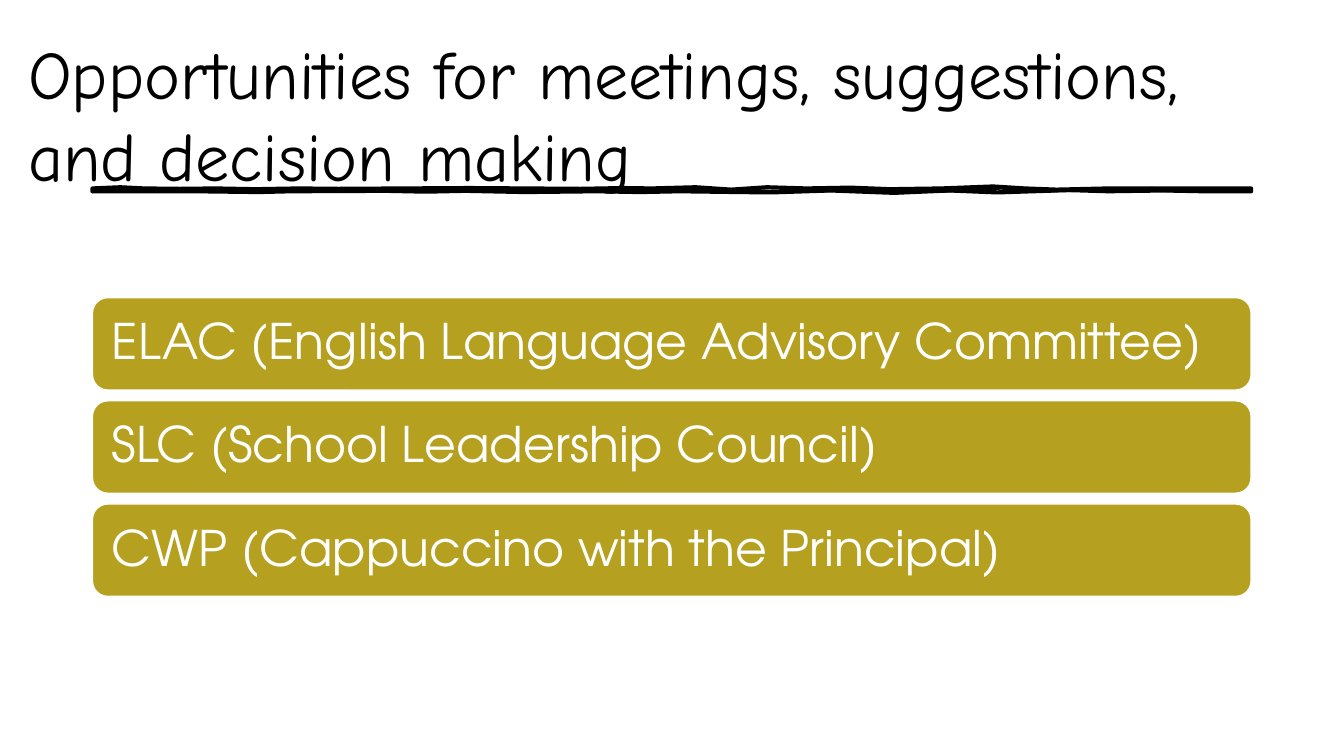
from dataclasses import dataclass

from pptx import Presentation
from pptx.dml.color import RGBColor
from pptx.enum.shapes import MSO_SHAPE
from pptx.enum.text import MSO_ANCHOR, PP_ALIGN
from pptx.util import Cm, Pt

ROUNDED = MSO_SHAPE.ROUNDED_RECTANGLE
MIDDLE = MSO_ANCHOR.MIDDLE
LEFT = PP_ALIGN.LEFT


@dataclass(frozen=True)
class Theme:
    ink: RGBColor = RGBColor(0x00, 0x00, 0x00)
    paper: RGBColor = RGBColor(0xFF, 0xFF, 0xFF)
    bar: RGBColor = RGBColor(0xB5, 0xA0, 0x20)
    title_font: str = "Comic Neue"
    body_font: str = "TeX Gyre Adventor"
    title_size: float = 48.6
    body_size: float = 35
    rule_width: float = 3
    bar_line: float = 1


THEME = Theme()
TITLE = "Opportunities for meetings, suggestions, and decision making"
GROUPS = [
    "ELAC (English Language Advisory Committee)",
    "SLC (School Leadership Council)",
    "CWP (Cappuccino with the Principal)",
]

# Hand-drawn edges: (distance along the rule, offset from the edge) in cm
OUTLINE_TOP = [(0, 0), (0.7, -0.03), (1.3, 0), (2.2, 0.01), (3.1, 0), (4.1, 0.02),
               (5.2, 0), (6.2, 0.01), (9.5, -0.01), (12.3, 0.01), (13.4, -0.01),
               (14.1, 0), (15.2, -0.03), (16.1, 0.03), (17, -0.03), (18, 0),
               (19.1, -0.02), (20.1, 0.02), (21.4, 0), (22.7, -0.05), (23.5, 0),
               (24.3, 0.03), (25.6, 0), (29.2, 0)]
OUTLINE_BOTTOM = [(0, 0), (2.6, 0), (4.2, 0.02), (5, 0), (7.4, -0.01), (8.4, 0.01),
                  (9.4, -0.01), (10.9, 0.02), (12.7, 0), (13.8, 0.02), (14.8, 0),
                  (16.3, 0.02), (17.1, 0.03), (18.6, -0.02), (20.2, 0.04),
                  (21.6, -0.02), (22.8, 0.03), (23.7, 0), (24.6, -0.03),
                  (25.6, 0), (27, -0.02), (28, 0), (29.2, 0)]
FILL_TOP = [(0, 0), (1, 0.03), (2, -0.03), (3.1, 0), (4.2, -0.02), (5.8, 0.02),
            (7.3, -0.02), (9, 0.02), (11.6, 0), (13, 0.02), (15.2, -0.02),
            (17.3, 0.04), (19.1, -0.04), (21.4, 0), (23, -0.02), (25, 0.04),
            (26.7, -0.04), (28, 0.03), (29.2, 0)]
FILL_BOTTOM = [(0, 0), (1.2, 0.02), (2.8, -0.01), (4, 0.02), (6.6, 0.01),
               (8, 0.02), (10, 0), (12, 0.02), (13.3, -0.03), (15, 0.02),
               (16.8, -0.02), (18.2, 0.04), (20, -0.04), (21.4, 0.04),
               (22.9, -0.04), (24, 0.03), (26, 0), (27.6, 0.03), (29.2, 0)]


def set_text(tf, text, font, size, color, inset):
    tf.word_wrap = True
    tf.vertical_anchor = MIDDLE
    tf.margin_left = tf.margin_right = Cm(inset)
    p = tf.paragraphs[0]
    p.text = text
    p.alignment = LEFT
    f = p.runs[0].font
    f.name, f.size, f.color.rgb = font, Pt(size), color
    return p


def add_title(s, x, y, w, h, text):
    tf = s.shapes.add_textbox(Cm(x), Cm(y), Cm(w), Cm(h)).text_frame
    set_text(tf, text, THEME.title_font, THEME.title_size, THEME.ink, 0.25)


def add_stroke(s, x, y, h, top, bottom):
    """Closed stroke running out along the top edge and back along the bottom."""
    edge = [(dx, dy) for dx, dy in top]
    edge += [(dx, h + dy) for dx, dy in reversed(bottom)]
    points = [(Cm(x + dx), Cm(y + dy)) for dx, dy in edge]
    fb = s.shapes.build_freeform(*points[0])
    fb.add_line_segments(points[1:], close=True)
    sp = fb.convert_to_shape()
    sp.shadow.inherit = False
    return sp


def add_rule(s, x, y, h):
    # Outline
    sp = add_stroke(s, x, y, h, OUTLINE_TOP, OUTLINE_BOTTOM)
    sp.fill.background()
    sp.line.color.rgb = THEME.ink
    sp.line.width = Pt(THEME.rule_width)
    # Filling
    sp = add_stroke(s, x, y, h, FILL_TOP, FILL_BOTTOM)
    sp.fill.solid()
    sp.fill.fore_color.rgb = THEME.ink
    sp.line.fill.background()


def add_bars(s, x, y, w, h, labels, gap=0.27):
    bar_h = (h - gap * (len(labels) - 1)) / len(labels)
    for i, label in enumerate(labels):
        top = y + i * (bar_h + gap)
        sp = s.shapes.add_shape(ROUNDED, Cm(x), Cm(top), Cm(w), Cm(bar_h))
        sp.shadow.inherit = False
        sp.fill.solid()
        sp.fill.fore_color.rgb = THEME.bar
        sp.line.color.rgb = THEME.paper
        sp.line.width = Pt(THEME.bar_line)
        p = set_text(sp.text_frame, label, THEME.body_font, THEME.body_size,
                     THEME.paper, 0.38)
        p.line_spacing = 0.9


def main():
    prs = Presentation()
    prs.slide_width, prs.slide_height = Cm(33.87), Cm(19.05)
    s = prs.slides.add_slide(prs.slide_layouts[6])
    add_rule(s, 2.33, 4.75, 0.07)
    add_title(s, 0.46, 1.02, 31.06, 3.68, TITLE)
    add_bars(s, 2.33, 7.5, 29.2, 7.53, GROUPS)
    prs.save("out.pptx")


if __name__ == "__main__":
    main()
